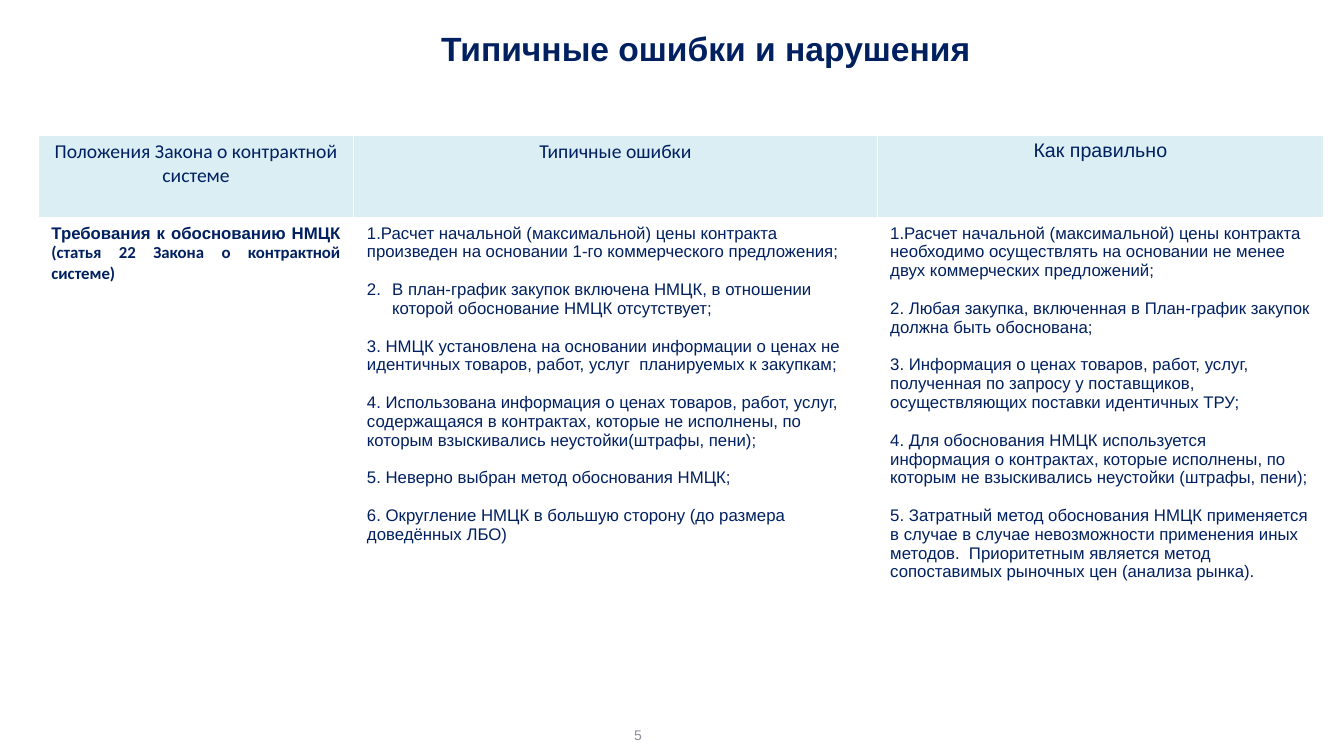
from dataclasses import dataclass
from typing import Optional

from lxml import etree
from pptx import Presentation
from pptx import util as u
from pptx.dml.color import RGBColor
from pptx.enum import text
from pptx.oxml import ns

NAVY = RGBColor(0x00, 0x20, 0x60)
PALE = RGBColor(0xDB, 0xEE, 0xF4)
GREY = RGBColor(0x8C, 0x8D, 0x9D)
WHITE = RGBColor(0xFF, 0xFF, 0xFF)
CENTER = text.PP_ALIGN.CENTER


@dataclass
class Item:
    words: str
    number: Optional[int] = None
    indent: float = 0


@dataclass
class Column:
    width: float
    heading: str
    font: str
    items: list[Item]


COLUMNS = [
    Column(3.13, "Положения Закона о контрактной системе", "Calibri", []),
    Column(5.19, "Типичные ошибки", "Calibri", [
        Item("Расчет начальной (максимальной) цены контракта произведен на основании 1-го коммерческого предложения;", 1),
        Item("В план-график закупок включена НМЦК, в отношении которой обоснование НМЦК отсутствует;", 2, 0.25),
        Item("3. НМЦК установлена на основании информации о ценах не идентичных товаров, работ, услуг  планируемых к закупкам;"),
        Item("4. Использована информация о ценах товаров, работ, услуг, содержащаяся в контрактах, которые не исполнены, по которым взыскивались неустойки(штрафы, пени);"),
        Item("5. Неверно выбран метод обоснования НМЦК;"),
        Item("6. Округление НМЦК в большую сторону (до размера доведённых ЛБО)"),
    ]),
    Column(4.43, "Как правильно", "Arial", [
        Item("Расчет начальной (максимальной) цены контракта необходимо осуществлять на основании не менее двух коммерческих предложений;", 1),
        Item("2. Любая закупка, включенная в План-график закупок должна быть обоснована;"),
        Item("3. Информация о ценах товаров, работ, услуг, полученная по запросу у поставщиков, осуществляющих поставки идентичных ТРУ;"),
        Item("4. Для обоснования НМЦК используется информация о контрактах, которые исполнены, по которым не взыскивались неустойки (штрафы, пени);"),
        Item("5. Затратный метод обоснования НМЦК применяется в случае в случае невозможности применения иных методов.  Приоритетным является метод сопоставимых рыночных цен (анализа рынка)."),
    ]),
]
PROVISION = [("Требования к обоснованию НМЦК ", "Arial"),
             ("(статья 22 Закона о контрактной системе)", "Calibri")]


def set_font(font, name: str, size: float, color: RGBColor, bold: bool = False) -> None:
    font.name, font.size, font.bold = name, u.Pt(size), bold
    font.color.rgb = color


def set_borders(cell, bottom: float) -> None:
    tc_pr = cell._tc.get_or_add_tcPr()
    for i, side in enumerate("LRTB"):
        ln = etree.Element(ns.qn(f"a:ln{side}"), w=str(u.Pt(bottom if side == "B" else 1)))
        fill = etree.SubElement(ln, ns.qn("a:solidFill"))
        etree.SubElement(fill, ns.qn("a:srgbClr"), val=str(WHITE))
        tc_pr.insert(i, ln)


def format_cell(cell, fill: Optional[RGBColor], bottom: float) -> None:
    cell.margin_left = cell.margin_right = u.Inches(0.13)
    cell.margin_top = cell.margin_bottom = u.Inches(0.05)
    if fill is None:
        cell.fill.background()
    else:
        cell.fill.solid()
        cell.fill.fore_color.rgb = fill
    set_borders(cell, bottom)


def add_items(tf, items: list[Item]) -> None:
    for i, item in enumerate(items):
        p = tf.add_paragraph() if i else tf.paragraphs[0]
        p.text = item.words
        if i:
            p.space_before = u.Pt(13.5)
        if item.number:
            p_pr = p._p.get_or_add_pPr()
            p_pr.set("marL", str(u.Inches(item.indent)))
            p_pr.set("indent", str(-u.Inches(item.indent)))
            etree.SubElement(p_pr, ns.qn("a:buAutoNum"), type="arabicPeriod", startAt=str(item.number))
        set_font(p.font, "Arial", 12, NAVY)


def add_title(s) -> None:
    sp = s.shapes.title
    sp.left, sp.top, sp.width, sp.height = map(u.Inches, (0.67, 0, 12.66, 0.96))
    tf = sp.text_frame
    tf.vertical_anchor = text.MSO_ANCHOR.MIDDLE
    p = tf.paragraphs[0]
    p.text, p.alignment = "Типичные ошибки и нарушения", CENTER
    set_font(p.font, "Arial", 24, NAVY, True)


def add_page_number(s) -> None:
    tf = s.shapes.add_textbox(*map(u.Inches, (6.19, 7.17, 2.92, 0.25))).text_frame
    tf.word_wrap = True
    tf.vertical_anchor = text.MSO_ANCHOR.MIDDLE
    p = tf.paragraphs[0]
    p.text = "5"
    set_font(p.font, "Arial", 10, GREY)


def add_errors_table(s) -> None:
    table = s.shapes.add_table(2, len(COLUMNS), *map(u.Inches, (0.38, 1.34, 12.75, 4.73))).table
    table.first_row = table.horz_banding = False
    for row, height in zip(table.rows, (0.83, 3.9)):
        row.height = u.Inches(height)
    for i, column in enumerate(COLUMNS):
        table.columns[i].width = u.Inches(column.width)
        head, body = table.cell(0, i), table.cell(1, i)
        format_cell(head, PALE, 3)
        format_cell(body, None, 1)
        p = head.text_frame.paragraphs[0]
        p.text, p.alignment = column.heading, CENTER
        set_font(p.font, column.font, 14, NAVY)
        add_items(body.text_frame, column.items)
    p = table.cell(1, 0).text_frame.paragraphs[0]
    p.alignment = text.PP_ALIGN.JUSTIFY
    for words, name in PROVISION:
        r = p.add_run()
        r.text = words
        set_font(r.font, name, 12, NAVY, True)


def main() -> None:
    prs = Presentation()
    prs.slide_width, prs.slide_height = u.Inches(13.33), u.Inches(7.5)
    s = prs.slides.add_slide(prs.slide_layouts[5])
    add_title(s)
    add_page_number(s)
    add_errors_table(s)
    prs.save("out.pptx")


if __name__ == "__main__":
    main()
